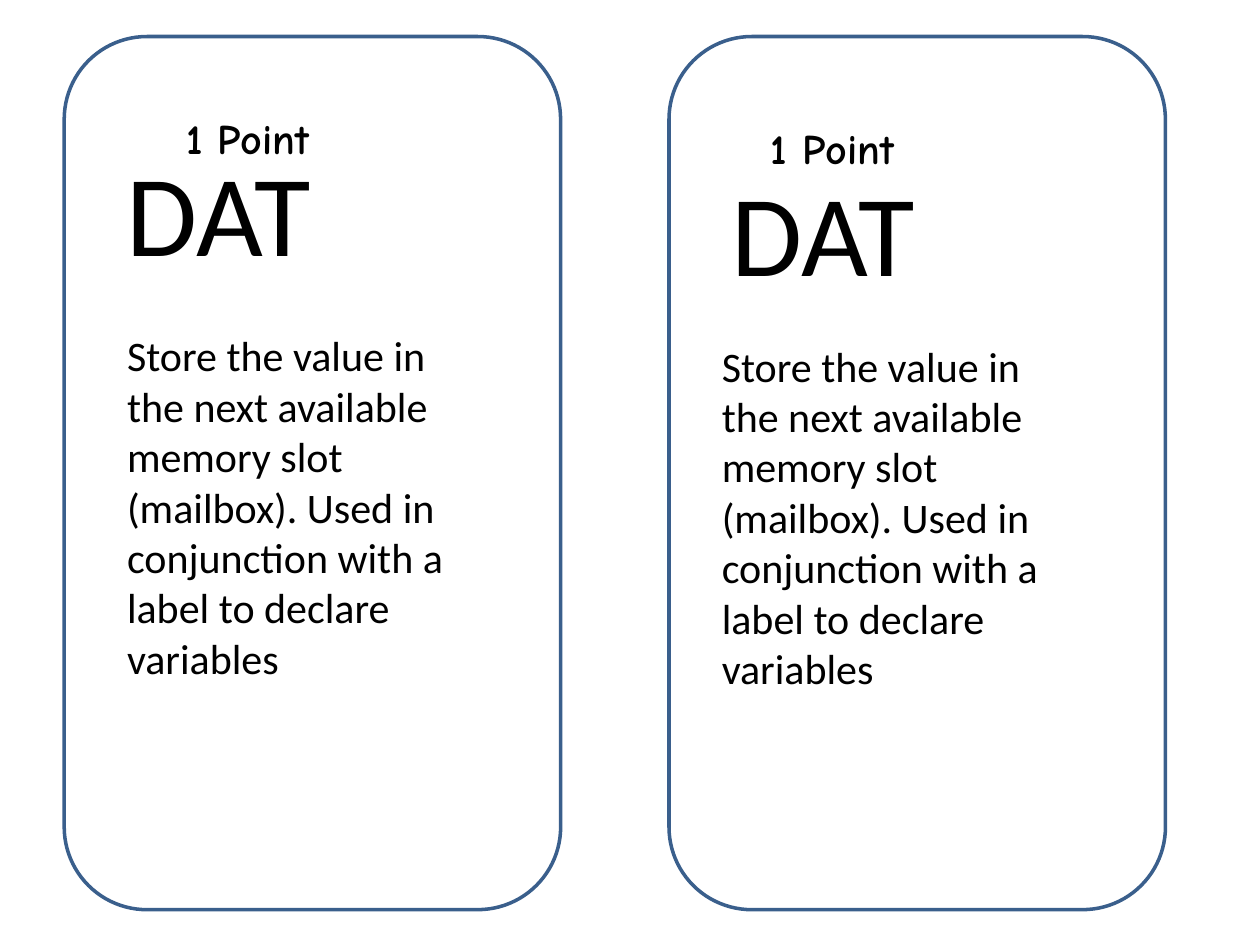
from pptx import Presentation
from pptx.dml.color import RGBColor
from pptx.enum.shapes import MSO_SHAPE
from pptx.enum.text import MSO_AUTO_SIZE
from pptx.util import Inches, Pt

ROUNDED = MSO_SHAPE.ROUNDED_RECTANGLE
GROW = MSO_AUTO_SIZE.SHAPE_TO_FIT_TEXT

SLIDE_WIDTH, SLIDE_HEIGHT = 10, 7.5
BLANK_LAYOUT = 6
INK, OUTLINE = "000000", "3A5F8C"

# Card grid: two columns, one row
CARD_LEFT, CARD_TOP = 0.51, 0.29
CARD_WIDTH, CARD_HEIGHT = 3.94, 6.93
COLUMN_STEP = 4.8

COMMAND = "DAT"
MEANING = ("Store the value in the next available memory slot (mailbox). "
           "Used in conjunction with a label to declare variables")
SCORE = "1 Point"

# Per column: (left, top) of each text, measured from the card's left edge
# and the slide's top
COMMAND_PLACES = [(0.4, 1.07), (0.4, 1.23)]
MEANING_PLACES = [(0.4, 2.57), (0.32, 2.65)]
SCORE_PLACES = [(0.87, 0.84), (0.71, 0.92)]


def color(value):
    return RGBColor.from_string(value)


def column_left(column):
    return CARD_LEFT + column * COLUMN_STEP


def add_card(page, column):
    card = page.shapes.add_shape(
        ROUNDED, Inches(column_left(column)), Inches(CARD_TOP),
        Inches(CARD_WIDTH), Inches(CARD_HEIGHT))
    card.shadow.inherit = False
    card.fill.background()
    card.line.color.rgb = color(OUTLINE)
    card.line.width = Pt(2)


def add_text(page, column, place, size, text, points, font="Calibri", bold=False):
    left, top = place
    width, height = size
    box = page.shapes.add_textbox(
        Inches(column_left(column) + left), Inches(top),
        Inches(width), Inches(height))
    frame = box.text_frame
    frame.word_wrap = True
    frame.auto_size = GROW
    span = frame.paragraphs[0].add_run()
    span.text = text
    span.font.name = font
    span.font.size = Pt(points)
    span.font.bold = bold
    span.font.color.rgb = color(INK)


def main():
    deck = Presentation()
    deck.slide_width = Inches(SLIDE_WIDTH)
    deck.slide_height = Inches(SLIDE_HEIGHT)
    page = deck.slides.add_slide(deck.slide_layouts[BLANK_LAYOUT])

    # Card outlines
    for column in range(2):
        add_card(page, column)

    # Command names
    for column, place in enumerate(COMMAND_PLACES):
        add_text(page, column, place, (3.07, 1.21), COMMAND, 66)

    # Explanations
    for column, place in enumerate(MEANING_PLACES):
        add_text(page, column, place, (2.91, 2.93), MEANING, 24)

    # Scores
    for column, place in enumerate(SCORE_PLACES):
        add_text(page, column, place, (2.36, 0.5), SCORE, 24, "Comic Neue", True)

    deck.save("out.pptx")


if __name__ == "__main__":
    main()
